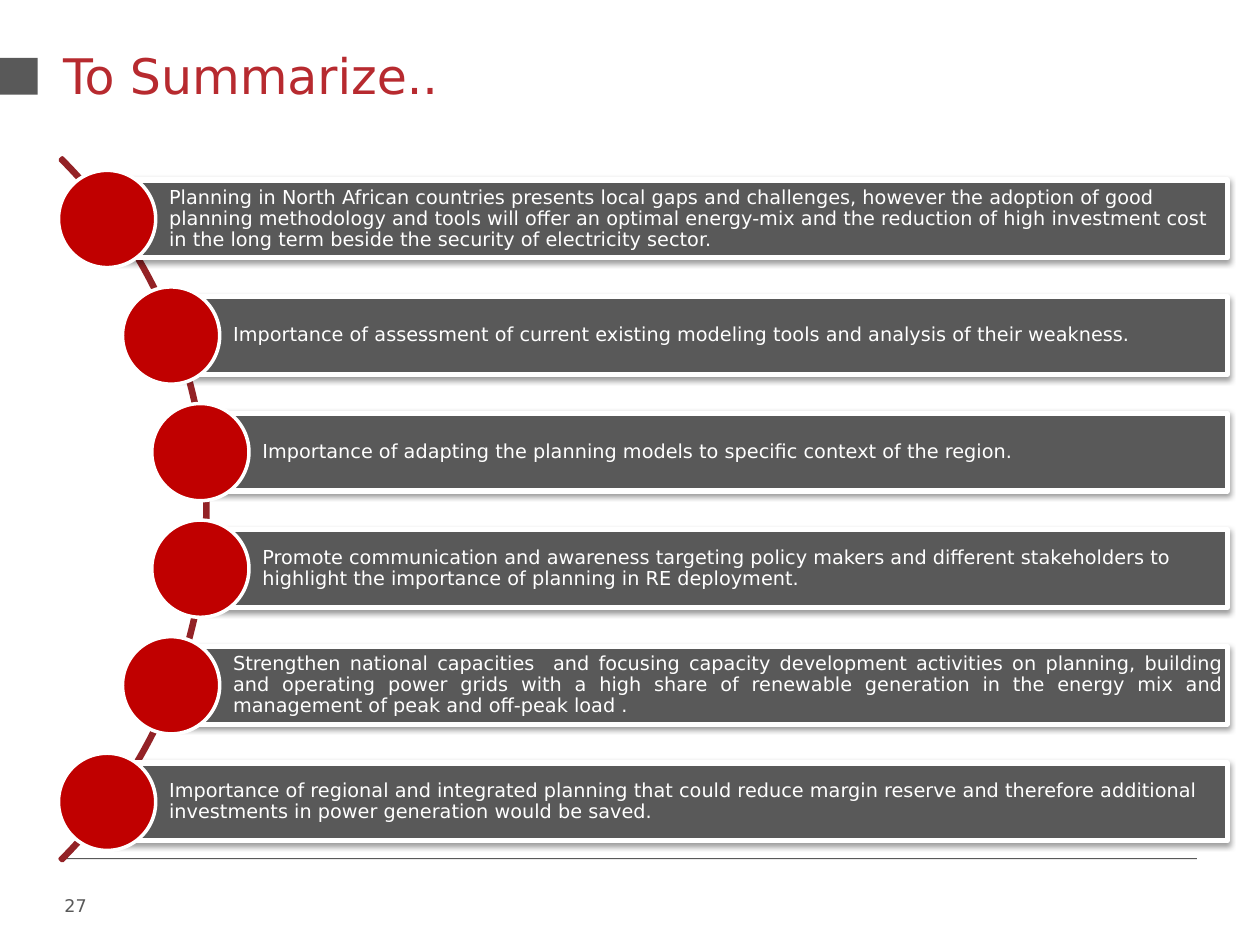
from lxml import etree
from pptx import Presentation
from pptx.dml.color import RGBColor
from pptx.enum.shapes import MSO_SHAPE
from pptx.enum.text import MSO_ANCHOR, MSO_AUTO_SIZE, PP_ALIGN
from pptx.oxml.ns import qn
from pptx.util import Cm, Pt

RECT, OVAL, ARC = MSO_SHAPE.RECTANGLE, MSO_SHAPE.OVAL, MSO_SHAPE.BLOCK_ARC
TOP, MIDDLE = MSO_ANCHOR.TOP, MSO_ANCHOR.MIDDLE
LEFT, JUSTIFY = PP_ALIGN.LEFT, PP_ALIGN.JUSTIFY
GREY = RGBColor(0x59, 0x59, 0x59)
WHITE = RGBColor(0xFF, 0xFF, 0xFF)
RED = RGBColor(0xC0, 0x00, 0x00)
DARK = RGBColor(0x93, 0x22, 0x26)
TITLE = RGBColor(0xB7, 0x2A, 0x2F)
FONT = "DejaVu Sans"


def write(shape, text, size, color, align=LEFT, anchor=TOP,
          insets=(0, 0.13, 0, 0.13), spacing=1.0):
    frame = shape.text_frame
    frame.word_wrap = True
    frame.auto_size = MSO_AUTO_SIZE.NONE
    frame.vertical_anchor = anchor
    (frame.margin_left, frame.margin_top,
     frame.margin_right, frame.margin_bottom) = map(Cm, insets)
    frame.text = text
    para = frame.paragraphs[0]
    para.alignment = align
    para.line_spacing = spacing
    para.space_before = Pt(0)
    font = para.runs[0].font
    font.name, font.size = FONT, Pt(size)
    font.color.rgb = color


def draw(kind, x, y, w, h, fill=None, line=None, width=0):
    shape = slide.shapes.add_shape(kind, Cm(x), Cm(y), Cm(w), Cm(h))
    shape.shadow.inherit = False
    if fill is None:
        shape.fill.background()
    else:
        shape.fill.solid()
        shape.fill.fore_color.rgb = fill
    if line is None:
        shape.line.fill.background()
    else:
        shape.line.color.rgb = line
        shape.line.width = Pt(width)
    return shape


deck = Presentation()
deck.slide_width, deck.slide_height = Cm(25.4), Cm(19.05)
slide = deck.slides.add_slide(deck.slide_layouts[5])

# Title with its side mark
draw(RECT, 0, 1.17, 0.76, 0.74, fill=GREY)
title = slide.shapes.title
title.left, title.top = Cm(1.27), Cm(0.79)
title.width, title.height = Cm(22.86), Cm(2.46)
write(title, "To Summarize..", 28, TITLE)

# Footer rule and page number
draw(RECT, 1.3, 17.3, 22.83, 0.02, fill=GREY)
page = slide.shapes.add_textbox(Cm(1.3), Cm(17.91), Cm(5.92), Cm(1.1))
write(page, "27", 10, GREY)

# Curve behind the points
curve = draw(ARC, -15.85, 0.25, 20.04, 20.04, line=DARK, width=2)
for i, value in enumerate((189, 27, 0.003)):
    curve.adjustments[i] = value

# Points: left edge of the bar, text, alignment
points = [
    (2.16, "Planning in North African countries presents local gaps and "
     "challenges, however the adoption of good planning methodology and tools "
     "will offer an optimal energy-mix and the reduction of high investment "
     "cost in the long term beside the security of electricity sector.", LEFT),
    (3.45, "Importance of assessment of current existing modeling tools and "
     "analysis of their weakness.", LEFT),
    (4.04, "Importance of adapting the planning models to specific context of "
     "the region.", LEFT),
    (4.04, "Promote communication and awareness targeting policy makers and "
     "different stakeholders to highlight the importance of planning in RE "
     "deployment.", LEFT),
    (3.45, "Strengthen national capacities  and focusing capacity development "
     "activities on planning, building and operating power grids with a high "
     "share of renewable generation in the energy mix and management of peak "
     "and off-peak load .", JUSTIFY),
    (2.16, "Importance of regional and integrated planning that could reduce "
     "margin reserve and therefore additional investments in power generation "
     "would be saved.", LEFT),
]
FIRST, STEP, RIGHT = 3.63, 2.35, 24.74
HIGH, DOT = 1.57, 1.96

for i, (x, text, align) in enumerate(points):
    y = FIRST + i * STEP
    bar = draw(RECT, x, y, RIGHT - x, HIGH, GREY, WHITE, 3)
    write(bar, text, 11, WHITE, align, MIDDLE, (1.25, 0.07, 0.07, 0.07), 0.9)

    # Soft shadow below the bar
    effects = bar.element.spPr.find(qn("a:effectLst"))
    shade = etree.SubElement(effects, qn("a:outerShdw"), blurRad=str(Pt(3.1)),
                             dist=str(Pt(1.6)), dir="5400000", rotWithShape="0")
    tone = etree.SubElement(shade, qn("a:srgbClr"), val="000000")
    etree.SubElement(tone, qn("a:alpha"), val="38000")

    # Dot centred on the bar's left edge
    draw(OVAL, x - DOT / 2, y + (HIGH - DOT) / 2, DOT, DOT, RED, WHITE, 2)

deck.save("out.pptx")
